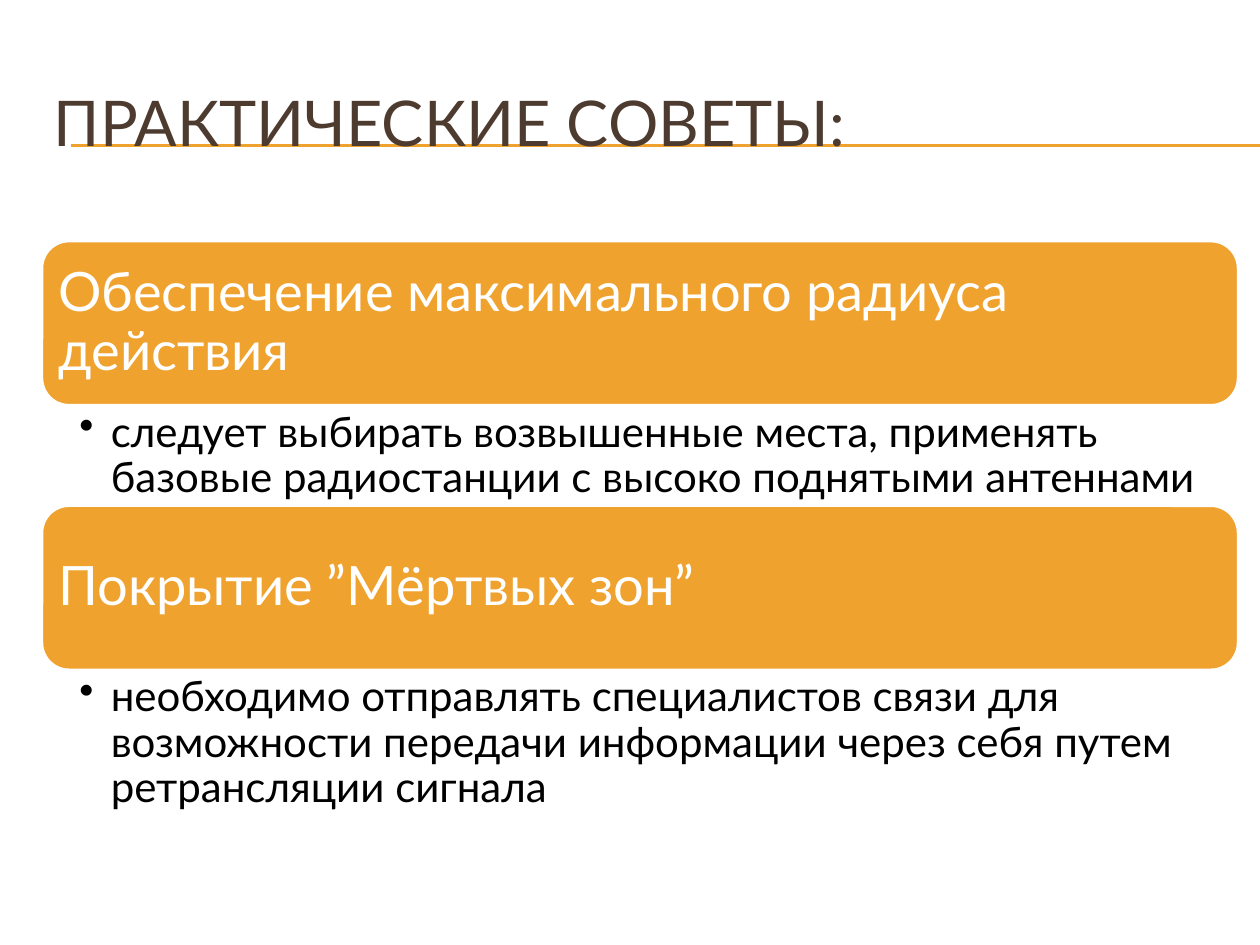
import pptx
import pptx.util
import pptx.dml.color
import pptx.enum.shapes
import pptx.enum.text
import pptx.oxml
import pptx.oxml.ns

Inches = pptx.util.Inches
Pt = pptx.util.Pt
RGBColor = pptx.dml.color.RGBColor
Anchor = pptx.enum.text.MSO_ANCHOR

ORANGE = RGBColor(0xF0, 0xA2, 0x2E)
BROWN = RGBColor(0x4E, 0x3B, 0x30)
WHITE = RGBColor(0xFF, 0xFF, 0xFF)
BLACK = RGBColor(0x00, 0x00, 0x00)

LEFT, WIDTH = 0.33, 9.5
HEADING_HEIGHT = 1.31
TIPS = [
    ("Обеспечение максимального радиуса действия",
     "следует выбирать возвышенные места, применять базовые радиостанции "
     "с высоко поднятыми антеннами", 0.79),
    ("Покрытие ”Mёртвых зон”",
     "необходимо отправлять специалистов связи для возможности передачи "
     "информации через себя путем ретрансляции сигнала", 1.12),
]


def apply_format(target, values):
    for name, value in values.items():
        setattr(target, name, value)


def write_text(shape, text, size, color, anchor, insets, spacing=1.0):
    left, top, right, bottom = map(Inches, insets)
    frame = shape.text_frame
    apply_format(frame, {
        "word_wrap": True, "vertical_anchor": anchor,
        "margin_left": left, "margin_top": top,
        "margin_right": right, "margin_bottom": bottom,
    })
    para = frame.paragraphs[0]
    apply_format(para, {
        "alignment": pptx.enum.text.PP_ALIGN.LEFT, "line_spacing": spacing,
    })
    span = para.add_run()
    span.text = text
    apply_format(span.font, {"name": "Lato", "size": Pt(size)})
    span.font.color.rgb = color
    return para


def add_bullet(para, indent):
    properties = para._p.get_or_add_pPr()
    properties.set("marL", str(indent))
    properties.set("indent", str(-indent))
    bullet = pptx.oxml.parse_xml(
        f'<a:buChar {pptx.oxml.ns.nsdecls("a")} char="•"/>')
    properties.append(bullet)


def add_rule(page, left, top, right):
    rule = page.shapes.add_connector(
        pptx.enum.shapes.MSO_CONNECTOR.STRAIGHT,
        Inches(left), Inches(top), Inches(right), Inches(top))
    rule.line.color.rgb = ORANGE
    rule.line.width = Pt(0.75)
    rule._element.spPr.append(pptx.oxml.parse_xml(
        f'<a:effectLst {pptx.oxml.ns.nsdecls("a")}/>'))


def add_title(page, left, top, width, height):
    for offset in (0.65, 0.66):
        add_rule(page, left + 0.23, top + offset, 10)
    box = page.shapes.add_textbox(*map(Inches, (left, top, width, height)))
    write_text(box, "ПРАКТИЧЕСКИЕ СОВЕТЫ:", 36, BROWN, Anchor.MIDDLE,
               (0.1, 0.05, 0.1, 0.05))


def add_heading(page, text, left, top, width, height):
    panel = page.shapes.add_shape(
        pptx.enum.shapes.MSO_SHAPE.ROUNDED_RECTANGLE,
        *map(Inches, (left, top, width, height)))
    panel.shadow.inherit = False
    panel.fill.solid()
    panel.fill.fore_color.rgb = ORANGE
    panel.line.color.rgb = WHITE
    panel.line.width = Pt(2)
    write_text(panel, text, 31, WHITE, Anchor.MIDDLE, (0.07,) * 4, 0.9)


def add_advice(page, text, left, top, width, height):
    box = page.shapes.add_textbox(*map(Inches, (left, top, width, height)))
    para = write_text(box, text, 24, BLACK, Anchor.TOP,
                      (0.3, 0.04, 0.24, 0.04), 0.9)
    add_bullet(para, Inches(0.25))


def add_tips(page, left, top, width):
    for heading, advice, advice_height in TIPS:
        add_heading(page, heading, left, top, width, HEADING_HEIGHT)
        top += HEADING_HEIGHT
        add_advice(page, advice, left, top, width, advice_height)
        top += advice_height


def main():
    deck = pptx.Presentation()
    apply_format(deck, {"slide_width": Inches(10), "slide_height": Inches(7.5)})
    page = deck.slides.add_slide(deck.slide_layouts[6])
    add_title(page, LEFT, 0.5, WIDTH, 0.92)
    add_tips(page, LEFT, 1.91, WIDTH)
    deck.save("out.pptx")


if __name__ == "__main__":
    main()
